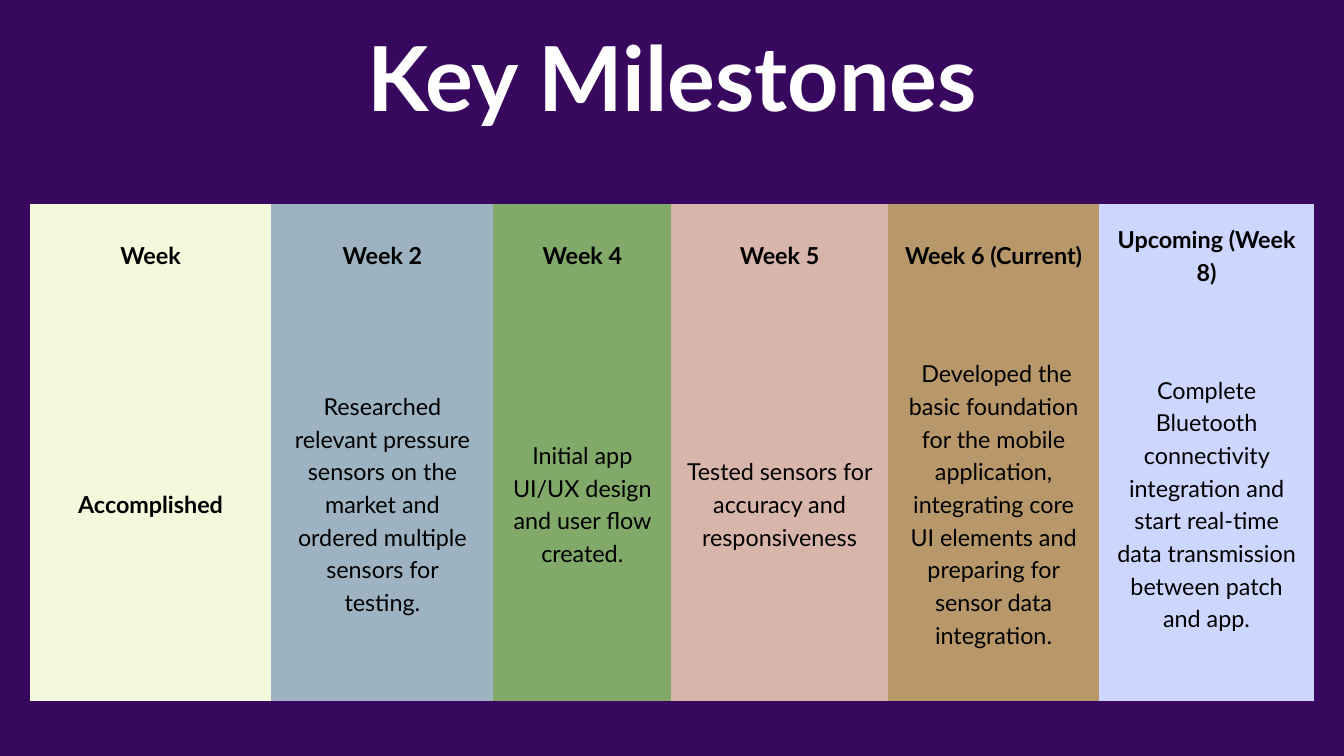
from dataclasses import dataclass

import lxml.etree
import pptx
import pptx.dml.color
import pptx.enum.text
import pptx.oxml.ns
import pptx.util


@dataclass(frozen=True)
class Theme:
    background: str = "38075E"
    title_color: str = "FFFFFF"
    body_color: str = "000000"
    font: str = "Lato"
    title_size: float = 96
    title_leading: float = 115.2
    body_size: float = 25
    body_leading: float = 35
    cell_margin: float = 0.21


@dataclass(frozen=True)
class Milestone:
    week: str
    result: str
    fill: str
    width: float
    result_bold: bool = False


THEME = Theme()
SLIDE_WIDTH, SLIDE_HEIGHT = 20, 11.25
TABLE_WIDTH, TABLE_TOP = 19.12, 3.03
ROW_HEIGHT = 1.48
ROW_SPANS = (1, 4)

MILESTONES = (
    Milestone("Week", "Accomplished", "F3FADC", 3.6, result_bold=True),
    Milestone("Week 2", "Researched relevant pressure sensors on the market and "
              "ordered multiple sensors for testing.", "9DB3C1", 3.3),
    Milestone("Week 4", "Initial app UI/UX design and user flow created.", "81A969", 2.65),
    Milestone("Week 5", "Tested sensors for accuracy and responsiveness", "D8B5AB", 3.22),
    Milestone("Week 6 (Current)", " Developed the basic foundation for the mobile "
              "application, integrating core UI elements and preparing for sensor "
              "data integration.", "B8986A", 3.15),
    Milestone("Upcoming (Week 8)", "Complete Bluetooth connectivity integration and "
              "start real-time data transmission between patch and app.", "CDD6FF", 3.19),
)


def rgb(color: str) -> pptx.dml.color.RGBColor:
    return pptx.dml.color.RGBColor.from_string(color)


def write_centered(frame, text: str, size: float, leading: float, color: str, bold: bool) -> None:
    frame.word_wrap = True
    frame.text = text
    para = frame.paragraphs[0]
    para.alignment = pptx.enum.text.PP_ALIGN.CENTER
    para.line_spacing = pptx.util.Pt(leading)
    font = para.runs[0].font
    font.name = THEME.font
    font.size = pptx.util.Pt(size)
    font.bold = bold
    font.color.rgb = rgb(color)


def hide_borders(cell) -> None:
    """Switch off all four edges, which must precede the fill in the cell's XML."""
    properties = cell._tc.get_or_add_tcPr()
    for index, side in enumerate(("lnL", "lnR", "lnT", "lnB")):
        line = lxml.etree.Element(pptx.oxml.ns.qn(f"a:{side}"), w="0")
        lxml.etree.SubElement(line, pptx.oxml.ns.qn("a:noFill"))
        properties.insert(index, line)


def fill_cell(cell, text: str, fill: str, bold: bool) -> None:
    margin = pptx.util.Inches(THEME.cell_margin)
    cell.margin_left = cell.margin_right = margin
    cell.margin_top = cell.margin_bottom = margin
    cell.vertical_anchor = pptx.enum.text.MSO_ANCHOR.MIDDLE
    cell.fill.solid()
    cell.fill.fore_color.rgb = rgb(fill)
    hide_borders(cell)
    write_centered(cell.text_frame, text, THEME.body_size, THEME.body_leading,
                   THEME.body_color, bold)


def add_title(page, text: str) -> None:
    width = 14.85
    box = page.shapes.add_textbox(
        pptx.util.Inches((SLIDE_WIDTH - width) / 2), pptx.util.Inches(0.33),
        pptx.util.Inches(width), pptx.util.Inches(1.59))
    frame = box.text_frame
    frame.margin_left = frame.margin_right = frame.margin_top = frame.margin_bottom = 0
    write_centered(frame, text, THEME.title_size, THEME.title_leading,
                   THEME.title_color, True)


def add_milestone_table(page, milestones: tuple[Milestone, ...]) -> None:
    table = page.shapes.add_table(
        len(ROW_SPANS), len(milestones),
        pptx.util.Inches((SLIDE_WIDTH - TABLE_WIDTH) / 2), pptx.util.Inches(TABLE_TOP),
        pptx.util.Inches(TABLE_WIDTH), pptx.util.Inches(ROW_HEIGHT * sum(ROW_SPANS))).table
    table.first_row = table.horz_banding = False
    for row, span in zip(table.rows, ROW_SPANS):
        row.height = pptx.util.Inches(ROW_HEIGHT * span)
    for index, milestone in enumerate(milestones):
        table.columns[index].width = pptx.util.Inches(milestone.width)
        fill_cell(table.cell(0, index), milestone.week, milestone.fill, True)
        fill_cell(table.cell(1, index), milestone.result, milestone.fill, milestone.result_bold)


def main() -> None:
    deck = pptx.Presentation()
    deck.slide_width = pptx.util.Inches(SLIDE_WIDTH)
    deck.slide_height = pptx.util.Inches(SLIDE_HEIGHT)
    page = deck.slides.add_slide(deck.slide_layouts[6])
    page.background.fill.solid()
    page.background.fill.fore_color.rgb = rgb(THEME.background)
    add_milestone_table(page, MILESTONES)
    add_title(page, "Key Milestones")
    deck.save("out.pptx")


if __name__ == "__main__":
    main()
